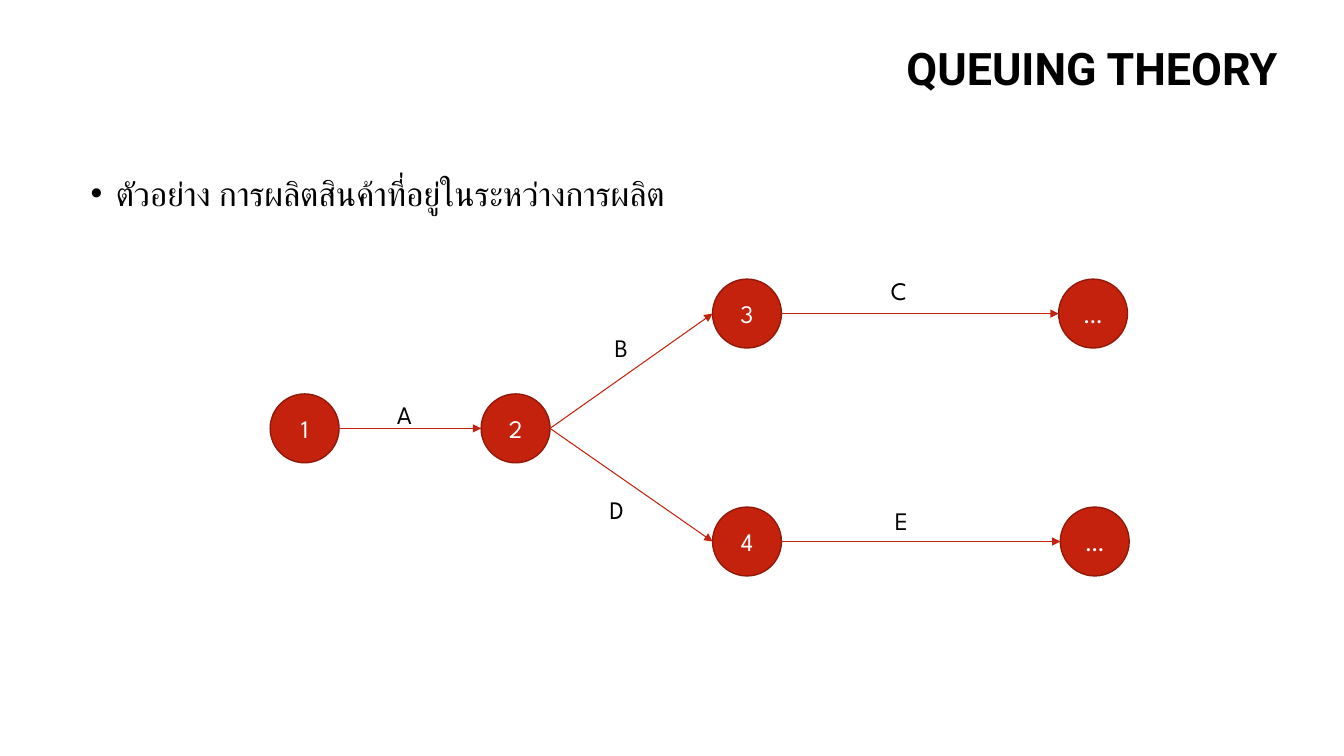
import pptx
import pptx.util
import pptx.dml.color
import pptx.enum.shapes
import pptx.enum.text
import pptx.oxml.ns
import lxml.etree

Pt = pptx.util.Pt
ALIGN = pptx.enum.text.PP_ALIGN
ANCHOR = pptx.enum.text.MSO_ANCHOR
COLORS = {"node": "C4220D", "outline": "91190A", "text": "000000", "node_text": "FFFFFF"}


def color(name):
    return pptx.dml.color.RGBColor.from_string(COLORS[name])


def write(shape, text, font_format, color_name, paragraph_format):
    paragraph = shape.text_frame.paragraphs[0]
    paragraph.text = text
    for name, value in paragraph_format.items():
        setattr(paragraph, name, value)
    font = paragraph.runs[0].font
    for name, value in font_format.items():
        setattr(font, name, value)
    font.color.rgb = color(color_name)
    return paragraph


presentation = pptx.Presentation()
presentation.slide_width, presentation.slide_height = Pt(960), Pt(540)
slide = presentation.slides.add_slide(presentation.slide_layouts[5])
shapes = slide.shapes

# Title
title = shapes.title
title.left, title.top, title.width, title.height = Pt(242), Pt(0), Pt(678), Pt(101.5)
title.text_frame.vertical_anchor = ANCHOR.MIDDLE
write(title, "QUEUING THEORY", {"name": "Roboto", "size": Pt(32), "bold": True},
      "text", {"alignment": ALIGN.RIGHT, "line_spacing": 0.9})

# Bullet line
body = shapes.add_textbox(Pt(57.6), Pt(123), Pt(852), Pt(317))
body.text_frame.word_wrap = True
paragraph = write(body, "ตัวอย่าง การผลิตสินค้าที่อยู่ในระหว่างการผลิต",
                  {"name": "Roboto", "size": Pt(24)}, "text", {"line_spacing": 0.9})
properties = paragraph._p.get_or_add_pPr()
properties.set("marL", str(Pt(18)))
properties.set("indent", str(-Pt(18)))
qn = pptx.oxml.ns.qn
lxml.etree.SubElement(properties, qn("a:buFont"), typeface="Arial")
lxml.etree.SubElement(properties, qn("a:buChar"), char="•")

# Nodes: left, top and label
DIAMETER = 49.2
ROWS = {"upper": 199.4, "middle": 281.4, "lower": 362.2}
NODES = {
    "start": (193, "middle", "1"),
    "fork": (343.7, "middle", "2"),
    "upper": (509, "upper", "3"),
    "lower": (509, "lower", "4"),
    "upper_end": (756.2, "upper", "…"),
    "lower_end": (757.4, "lower", "…"),
}
LABEL_FONT = {"name": "League Spartan", "size": Pt(18)}
for left, row, label in NODES.values():
    node = shapes.add_shape(pptx.enum.shapes.MSO_SHAPE.OVAL, Pt(left), Pt(ROWS[row]),
                            Pt(DIAMETER), Pt(DIAMETER))
    node.shadow.inherit = False
    node.fill.solid()
    node.fill.fore_color.rgb = color("node")
    node.line.color.rgb = color("outline")
    node.line.width = Pt(1)
    node.text_frame.vertical_anchor = ANCHOR.MIDDLE
    write(node, label, LABEL_FONT, "node_text", {"alignment": ALIGN.CENTER})

# Arrows with their labels: from, to, label, label left, top and width
ARROWS = [
    ("start", "fork", "A", 276.5, 281.5, 28),
    ("fork", "upper", "B", 432, 234, 25),
    ("upper", "upper_end", "C", 629.3, 193, 29.5),
    ("fork", "lower", "D", 428.4, 349.2, 28),
    ("lower", "lower_end", "E", 632.2, 357.1, 24.5),
]
for source, target, label, left, top, width in ARROWS:
    source_left, source_row, _ = NODES[source]
    target_left, target_row, _ = NODES[target]
    arrow = shapes.add_connector(
        pptx.enum.shapes.MSO_CONNECTOR.STRAIGHT,
        Pt(source_left + DIAMETER), Pt(ROWS[source_row] + DIAMETER / 2),
        Pt(target_left), Pt(ROWS[target_row] + DIAMETER / 2))
    arrow.line.color.rgb = color("node")
    arrow.line.width = Pt(0.75)
    lxml.etree.SubElement(arrow.line._get_or_add_ln(), qn("a:tailEnd"), type="triangle")
    lxml.etree.SubElement(arrow._element.spPr, qn("a:effectLst"))

    caption = shapes.add_textbox(Pt(left), Pt(top), Pt(width), Pt(29))
    caption.text_frame.word_wrap = False
    caption.text_frame.auto_size = pptx.enum.text.MSO_AUTO_SIZE.SHAPE_TO_FIT_TEXT
    write(caption, label, LABEL_FONT, "text", {"alignment": ALIGN.LEFT})

presentation.save("out.pptx")
